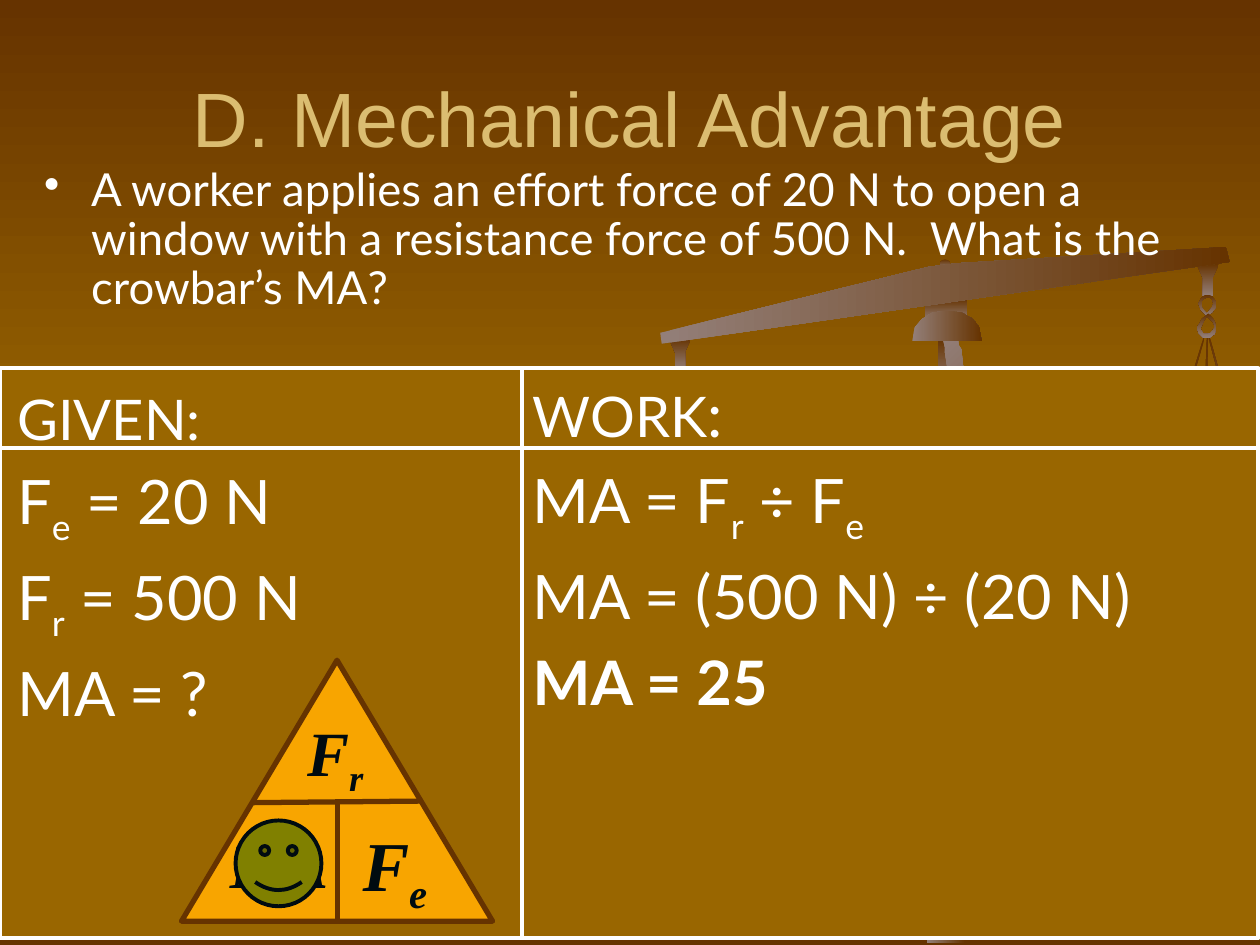
from pptx import Presentation, util as u
from pptx.dml.color import RGBColor
from pptx.enum import shapes as kinds, text as txt
from pptx.oxml.ns import qn
from copy import deepcopy
from lxml import etree

# Theme: colours, fonts and type sizes
THEME = dict(
    dark="663300", panel="996600", haze="937F79", white="FFFFFF", gold="DBBD71",
    amber="F8A500", ink="000B10", olive="808000",
    title=dict(size=44, name="Arial", color="DBBD71"),
    question=dict(size=26, name="Lato", color="FFFFFF"),
    heading=dict(size=32, name="Lato", color="FFFFFF"),
    working=dict(size=35, name="Lato", color="FFFFFF"),
    symbol=dict(size=36, name="Times New Roman", color="000B10", bold=True, italic=True),
    big_symbol=dict(size=40, name="Times New Roman", color="000B10", bold=True, italic=True),
)
DOWN, ACROSS, SLANT = 270, 0, 315   # gradient directions, counter-clockwise

# Content: a paragraph is a list of (text, style); "_" marks a subscript
TITLE = [[("D. Mechanical Advantage", "title")]]
QUESTION = [[("A worker applies an effort force of 20 N to open a window with a "
              "resistance force of 500 N.  What is the crowbar’s MA?", "question")]]
GIVEN = [
    [("GIVEN:", "heading")],
    [("F", "working"), ("_e", "working"), (" = 20 N", "working")],
    [("F", "working"), ("_r", "working"), (" = 500 N", "working")],
    [("MA = ?", "working")],
]
WORK = [
    [("WORK", "heading"), (":", "working")],
    [("MA = F", "working"), ("_r", "working"), (" ÷ F", "working"), ("_e", "working")],
    [("MA = (500 N) ÷ (20 N)", "working")],
    [("MA = 25", "working")],
]
TRIANGLE_LABELS = [   # box in cm, runs
    ((4.39, 16.51, 2.49, 1.78), [("MA", "symbol")]),
    ((5.94, 14.25, 1.68, 1.78), [("F", "symbol"), ("_r", "symbol")]),
    ((7.06, 16.43, 1.88, 1.96), [("F", "big_symbol"), ("_e", "big_symbol")]),
]

# Balance scale in the background, in cm
ROPES = [((22.96, 6.6, 0.03, 9.14), 16.6), ((24.21, 6.76, 0.03, 8.81), 1.5),
         ((24.87, 6.71, 0.03, 3.89), 344.6)]
HOOK = [(0.45, 0), (0, 0.03), (0.12, 0.3), (0.12, 0.66), (0.32, 0.66), (0.32, 0.28)]
HOOK_CORNERS = [(13.49, 6.81), (24.13, 5.31)]
CHAIN_LINKS = [   # outer and inner outline
    ([(24.33, 6.38), (24.43, 6.3), (24.51, 6.2), (24.51, 6.07), (24.43, 5.97), (24.33, 5.94),
      (24.26, 5.97), (24.21, 6.02), (24.16, 6.12), (24.21, 6.25), (24.28, 6.32)],
     [(24.36, 5.99), (24.43, 6.02), (24.46, 6.12), (24.43, 6.2), (24.33, 6.32),
      (24.28, 6.27), (24.23, 6.2), (24.23, 6.07), (24.28, 6.02)]),
    ([(24.16, 6.71), (24.26, 6.81), (24.38, 6.81), (24.49, 6.73), (24.51, 6.6), (24.49, 6.48),
      (24.43, 6.4), (24.36, 6.32), (24.23, 6.43), (24.18, 6.53), (24.13, 6.6)],
     [(24.21, 6.6), (24.28, 6.45), (24.33, 6.38), (24.46, 6.5), (24.49, 6.6),
      (24.41, 6.71), (24.36, 6.73), (24.26, 6.73), (24.21, 6.65)]),
]
BEAM = [(24.71, 4.98), (24.79, 5.28), (13.34, 6.93), (13.31, 6.71), (18.72, 5.38), (19.28, 5.31)]
POLE = [(20.09, 13.69), (19.05, 7.11), (19.05, 7.01), (19, 6.81), (19.3, 6.73),
        (19.33, 6.96), (19.38, 7.04)]
DOME = [(19.1, 6.27), (19.38, 6.3), (19.61, 6.43), (19.74, 6.6), (19.79, 6.88),
        (18.39, 6.88), (18.44, 6.6), (18.59, 6.43), (18.8, 6.3)]

prs = Presentation()
prs.slide_width, prs.slide_height = u.Cm(25.4), u.Cm(19.05)
slide = prs.slides.add_slide(prs.slide_layouts[6])
parts = slide.shapes


def rgb(name):
    return RGBColor.from_string(THEME[name])


def cm(values):
    return [u.Cm(value) for value in values]


def shade(fill, colors, angle):
    fill.gradient()
    fill.gradient_angle = angle
    stops = fill.gradient_stops
    for stop, color, position in zip(stops, colors, (0, 1)):
        stop.color.rgb, stop.position = rgb(color), position


def finish(part, fill=None, line=None, width=1, gradient=None):
    part.shadow.inherit = False
    if gradient:
        shade(part.fill, *gradient)
    else:
        part.fill.solid()
        part.fill.fore_color.rgb = rgb(fill)
    if line:
        part.line.color.rgb, part.line.width = rgb(line), u.Pt(width)
    else:
        part.line.fill.background()
    return part


def preset(kind, box, **look):
    return finish(parts.add_shape(kind, *cm(box)), **look)


def outline(*contours, **look):
    first, *rest = [[cm(point) for point in contour] for contour in contours]
    builder = parts.build_freeform(*first[0])
    builder.add_line_segments(first[1:], close=True)
    for contour in rest:
        builder.move_to(*contour[0])
        builder.add_line_segments(contour[1:], close=True)
    return finish(builder.convert_to_shape(), **look)


def rule(ends, color, width):
    line = parts.add_connector(kinds.MSO_CONNECTOR.STRAIGHT, *cm(ends))
    line.line.color.rgb, line.line.width = rgb(color), u.Pt(width)
    etree.SubElement(line._element.spPr, qn("a:effectLst"))


def write(box, paragraphs, wrap=True, frame_format=None, **paragraph_format):
    frame = parts.add_textbox(*cm(box)).text_frame
    frame.word_wrap = wrap
    for key, value in (frame_format or {}).items():
        setattr(frame, key, value)
    for index, runs in enumerate(paragraphs):
        paragraph = frame.paragraphs[0] if index == 0 else frame.add_paragraph()
        for key, value in paragraph_format.items():
            setattr(paragraph, key, value)
        for words, style in runs:
            run = paragraph.add_run()
            run.text = words.lstrip("_")
            for key, value in THEME[style].items():
                if key == "color":
                    run.font.color.rgb = RGBColor.from_string(value)
                else:
                    setattr(run.font, key, u.Pt(value) if key == "size" else value)
            if words.startswith("_"):
                run._r.get_or_add_rPr().set("baseline", "-25000")
    return frame


# Background: dark at both edges, lighter in the middle
backdrop = slide.background.fill
shade(backdrop, ("dark", "panel"), DOWN)
stop_list = slide.background._cSld.find(".//" + qn("a:gsLst"))
stop_list.append(deepcopy(stop_list[0]))
for stop, place in zip(stop_list, ("0", "50000", "100000")):
    stop.set("pos", place)

# Balance scale
downward = (("dark", "haze"), DOWN)
sideways = (("haze", "dark"), ACROSS)
BAR, DISC = kinds.MSO_SHAPE.RECTANGLE, kinds.MSO_SHAPE.OVAL
preset(BAR, (18.64, 6.02, 0.86, 0.46), gradient=downward)
preset(DISC, (18.95, 5.23, 0.2, 0.2), gradient=downward)
for box, turn in ROPES:
    preset(BAR, box, gradient=downward).rotation = turn
for left, top in HOOK_CORNERS:
    outline([(left + x, top + y) for x, y in HOOK], gradient=downward)
for link in CHAIN_LINKS:
    outline(*link, gradient=downward)
outline(BEAM, gradient=sideways)
preset(BAR, (18.69, 7.82, 0.76, 11.2), gradient=sideways)
preset(BAR, (18.9, 6.81, 0.33, 1.07), gradient=downward)
outline(POLE, gradient=(("haze", "dark"), SLANT))
outline(DOME, gradient=sideways)

# Title and question
write((1.27, 0.76, 22.86, 3.18), TITLE, alignment=txt.PP_ALIGN.CENTER,
      frame_format=dict(vertical_anchor=txt.MSO_ANCHOR.MIDDLE))
question = write((0.64, 3.25, 24.77, 4.37), QUESTION, line_spacing=0.9)
bullet_format = question.paragraphs[0]._p.get_or_add_pPr()
for side, indent in dict(marL=0.95, indent=-0.95).items():
    bullet_format.set(side, str(u.Cm(indent)))
etree.SubElement(bullet_format, qn("a:buChar")).set("char", "•")

# Given and work panel
preset(BAR, (0, 7.42, 25.37, 11.5), fill="panel", line="white", width=2.25)
write((0.1, 7.62, 10.49, 7.21), GIVEN, space_before=u.Pt(7))
write((10.49, 7.47, 14.91, 7.14), WORK, space_before=u.Pt(7)).paragraphs[-1].runs[0].font.bold = True
for ends in [(10.52, 7.44, 10.52, 18.92), (0, 9.04, 25.4, 9.04)]:
    rule(ends, "white", 2.25)

# Formula triangle, with the unknown covered
preset(kinds.MSO_SHAPE.ISOSCELES_TRIANGLE, (3.66, 13.31, 6.27, 5.26), fill="amber", line="dark", width=3)
for ends in [(5.11, 16.18, 8.48, 16.15), (6.81, 16.18, 6.81, 18.54)]:
    rule(ends, "dark", 3)
for box, runs in TRIANGLE_LABELS:
    write(box, [runs], wrap=False, frame_format=dict(auto_size=txt.MSO_AUTO_SIZE.SHAPE_TO_FIT_TEXT))
preset(kinds.MSO_SHAPE.SMILEY_FACE, (4.75, 16.54, 1.73, 1.73), fill="olive", line="ink", width=2.25)

prs.save("out.pptx")
